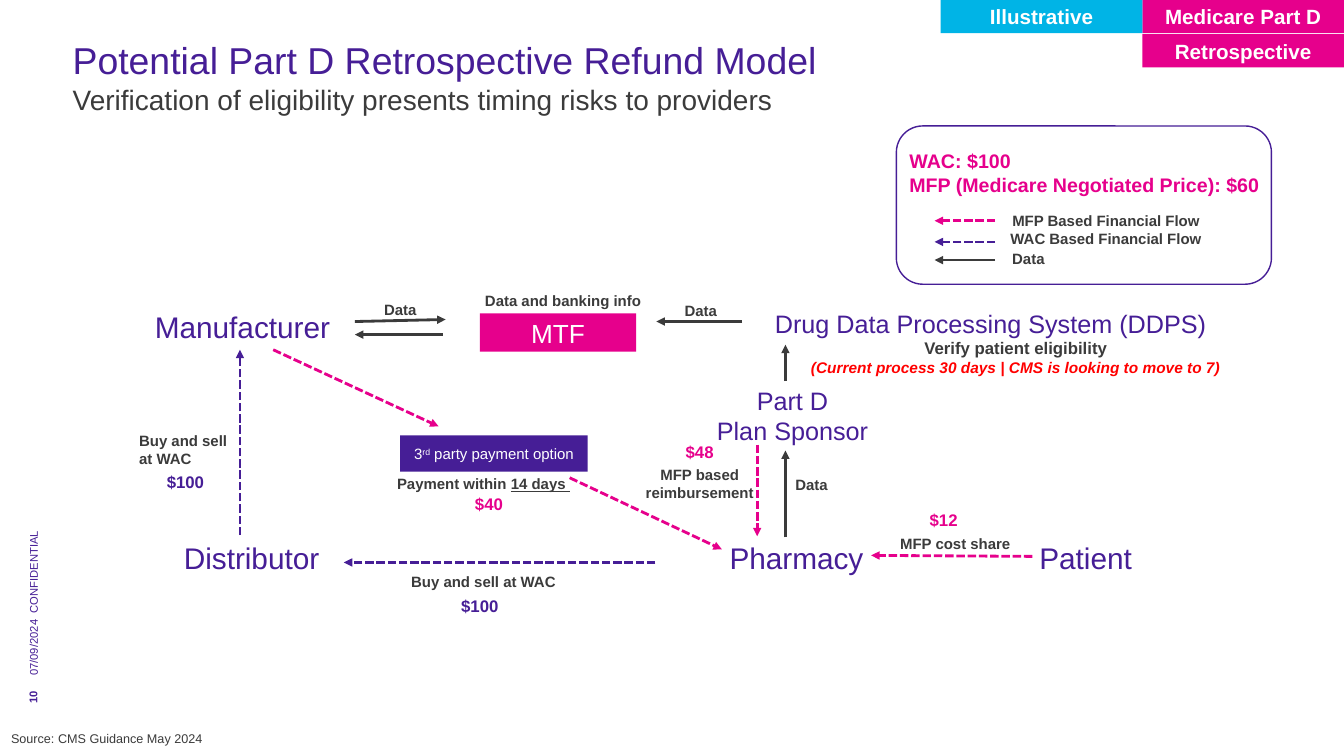
from dataclasses import dataclass
from typing import NamedTuple

from lxml.etree import SubElement
from pptx import Presentation
from pptx.dml.color import RGBColor
from pptx.enum.dml import MSO_LINE
from pptx.enum.shapes import MSO_CONNECTOR, MSO_SHAPE
from pptx.enum.text import MSO_ANCHOR as Anchor, PP_ALIGN as Align
from pptx.oxml.ns import qn
from pptx.util import Inches, Pt

COLORS = {
    "purple": "461E96", "pink": "E6008C", "cyan": "00B4E6",
    "gray": "3B3B3B", "red": "FF0000", "white": "FFFFFF",
}


class Style(NamedTuple):
    size: float
    color: str
    bold: bool = False
    italic: bool = False
    underline: bool = False
    baseline: int = 0


class Span(NamedTuple):
    text: str
    style: Style


@dataclass
class Label:
    box: tuple[float, float, float, float]
    lines: list[list[Span]]
    align: Align = Align.CENTER
    inset: bool = True
    wrap: bool = True
    rotation: int = 0


class Tag(NamedTuple):
    box: tuple[float, float, float, float]
    fill: str
    spans: list[Span]


class Flow(NamedTuple):
    start: tuple[float, float]
    end: tuple[float, float]
    color: str
    dashed: bool = True


ACTOR = Style(21.3, "purple")
SYSTEM = Style(18, "purple")
NOTE = Style(10.7, "gray", bold=True)
WAC_AMOUNT = Style(12, "purple", bold=True)
MFP_AMOUNT = Style(12, "pink", bold=True)
PRICE = Style(14, "pink", bold=True)
TAG = Style(14.7, "white", bold=True)
PAYMENT = Style(10.7, "white")
FOOTER = Style(8, "purple")


def rgb(name: str) -> RGBColor:
    return RGBColor.from_string(COLORS[name])


def one(text: str, style: Style) -> list[list[Span]]:
    """Text of a single line in a single style."""
    return [[Span(text, style)]]


def write(frame, lines: list[list[Span]], align: Align) -> None:
    for index, spans in enumerate(lines):
        paragraph = frame.paragraphs[0] if index == 0 else frame.add_paragraph()
        paragraph.alignment = align
        for text, style in spans:
            run = paragraph.add_run()
            run.text = text
            font = run.font
            font.name, font.size = "Arial", Pt(style.size)
            font.bold, font.italic = style.bold, style.italic
            font.underline = style.underline
            font.color.rgb = rgb(style.color)
            if style.baseline:
                run._r.get_or_add_rPr().set("baseline", str(style.baseline))


def draw_label(shapes, label: Label) -> None:
    box = shapes.add_textbox(*map(Inches, label.box))
    box.rotation = label.rotation
    frame = box.text_frame
    frame.word_wrap = label.wrap
    if not label.inset:
        frame.margin_left = frame.margin_right = 0
        frame.margin_top = frame.margin_bottom = 0
    write(frame, label.lines, label.align)


def draw_tag(shapes, tag: Tag) -> None:
    block = shapes.add_shape(MSO_SHAPE.RECTANGLE, *map(Inches, tag.box))
    block.shadow.inherit = False
    block.fill.solid()
    block.fill.fore_color.rgb = rgb(tag.fill)
    block.line.fill.background()
    block.text_frame.word_wrap = True
    block.text_frame.vertical_anchor = Anchor.MIDDLE
    write(block.text_frame, [tag.spans], Align.CENTER)


def draw_flow(shapes, flow: Flow) -> None:
    arrow = shapes.add_connector(
        MSO_CONNECTOR.STRAIGHT, *map(Inches, flow.start + flow.end))
    arrow.line.width = Pt(2)
    arrow.line.color.rgb = rgb(flow.color)
    if flow.dashed:
        arrow.line.dash_style = MSO_LINE.SQUARE_DOT
    SubElement(arrow.line._get_or_add_ln(), qn("a:tailEnd"), type="triangle")
    SubElement(arrow._element.spPr, qn("a:effectLst"))


def draw_legend_frame(shapes) -> None:
    legend = shapes.add_shape(
        MSO_SHAPE.ROUNDED_RECTANGLE, *map(Inches, (8.89, 1.25, 3.72, 1.57)))
    legend.shadow.inherit = False
    legend.fill.background()
    legend.line.color.rgb = rgb("purple")
    legend.line.width = Pt(1)


TAGS = [
    Tag((11.33, 0, 2, 0.33), "pink", [Span("Medicare Part D", TAG)]),
    Tag((9.33, 0, 2, 0.33), "cyan", [Span("Illustrative", TAG)]),
    Tag((11.33, 0.34, 2, 0.33), "pink", [Span("Retrospective", TAG)]),
    Tag((4.76, 3.11, 1.55, 0.38), "pink", [Span("MTF", Style(18.7, "white"))]),
    Tag((3.97, 4.32, 1.86, 0.36), "purple", [
        Span("3", PAYMENT), Span("rd", PAYMENT._replace(baseline=30000)),
        Span(" party payment option", PAYMENT)]),
]

FLOWS = [
    Flow((2.38, 5.31), (2.38, 3.47), "purple"),
    Flow((6.5, 5.58), (3.41, 5.58), "purple"),
    Flow((10.24, 5.52), (8.64, 5.51), "pink"),
    Flow((5.65, 4.74), (7.16, 5.45), "pink"),
    Flow((2.71, 3.47), (4.35, 4.23), "pink"),
    Flow((7.51, 4.41), (7.51, 5.32), "pink"),
    Flow((7.36, 3.19), (6.51, 3.19), "gray", dashed=False),
    Flow((4.39, 3.32), (3.52, 3.32), "gray", dashed=False),
    Flow((3.52, 3.19), (4.42, 3.17), "gray", dashed=False),
    Flow((7.79, 5.33), (7.79, 4.47), "gray", dashed=False),
    Flow((7.79, 3.78), (7.79, 3.42), "gray", dashed=False),
    Flow((9.87, 2.19), (9.27, 2.19), "pink"),
    Flow((9.87, 2.4), (9.27, 2.4), "purple"),
    Flow((9.87, 2.58), (9.27, 2.58), "gray", dashed=False),
]

LABELS = [
    Label((0.72, 0.37, 11.61, 0.55), [
        [Span("Potential Part D Retrospective Refund Model", Style(26.7, "purple"))],
        [Span("Verification of eligibility presents timing risks to providers",
              Style(20, "gray"))]], Align.LEFT, inset=False),
    Label((8.92, 1.43, 4.12, 0.57), [
        [Span("WAC: $100", PRICE)],
        [Span("MFP (Medicare Negotiated Price): $60", PRICE)]], Align.LEFT),
    Label((9.87, 2.05, 2.2, 0.46), one("MFP Based Financial Flow", NOTE)),
    Label((9.87, 2.23, 2.2, 0.46), one("WAC Based Financial Flow", NOTE)),
    Label((9.75, 2.43, 0.9, 0.28), one("Data", NOTE)),
    Label((1.31, 3.01, 2.19, 0.46), one("Manufacturer", ACTOR)),
    Label((1.62, 5.31, 1.75, 0.46), one("Distributor", ACTOR)),
    Label((6.9, 5.31, 2, 0.46), one("Pharmacy", ACTOR)),
    Label((10.21, 5.31, 1.87, 0.46), one("Patient", ACTOR), Align.LEFT),
    Label((7.29, 3.01, 5.07, 0.41), one("Drug Data Processing System (DDPS)", SYSTEM)),
    Label((6.65, 3.77, 2.42, 0.71),
          [[Span("Part D", SYSTEM)], [Span("Plan Sponsor", SYSTEM)]]),
    Label((7.64, 3.3, 4.87, 0.62), [
        [Span("Verify patient eligibility", Style(12, "gray", bold=True))],
        [Span("(Current process 30 days | CMS is looking to move to 7)",
              Style(11, "red", bold=True, italic=True))]]),
    Label((3.58, 2.84, 4.01, 0.28), one("Data and banking info", NOTE)),
    Label((3.67, 2.93, 0.6, 0.28), one("Data", NOTE)),
    Label((6.65, 2.94, 0.6, 0.28), one("Data", NOTE)),
    Label((7.75, 4.67, 0.6, 0.28), one("Data", NOTE)),
    Label((8.2, 5.25, 2.55, 0.28), one("MFP cost share", NOTE)),
    Label((6.28, 4.57, 1.32, 0.46), one("MFP based reimbursement", NOTE)),
    Label((3.92, 4.71, 1.75, 0.18), [[
        Span("Payment within ", NOTE),
        Span("14 days ", NOTE._replace(underline=True))]], inset=False),
    Label((1.38, 4.28, 0.92, 0.36), one("Buy and sell at WAC", NOTE),
          Align.LEFT, inset=False),
    Label((3.98, 5.63, 1.72, 0.28), one("Buy and sell at WAC", NOTE), Align.LEFT),
    Label((1.51, 4.63, 0.66, 0.3), one("$100", WAC_AMOUNT)),
    Label((4.43, 5.86, 0.66, 0.3), one("$100", WAC_AMOUNT)),
    Label((4.52, 4.85, 0.66, 0.3), one("$40", MFP_AMOUNT)),
    Label((9.03, 5.01, 0.66, 0.3), one("$12", MFP_AMOUNT)),
    Label((6.61, 4.33, 0.66, 0.3), one("$48", MFP_AMOUNT)),
    Label((0.03, 6.31, 0.63, 0.16), one("07/09/2024", FOOTER),
          Align.LEFT, inset=False, rotation=270),
    Label((-0.93, 4.73, 2.55, 0.16), one("CONFIDENTIAL", FOOTER),
          Align.LEFT, inset=False, rotation=270),
    Label((0.21, 6.77, 0.26, 0.16), one("10", FOOTER._replace(bold=True)),
          Align.LEFT, inset=False, rotation=270),
    Label((0.11, 7.25, 1.91, 0.3), one("Source: CMS Guidance May 2024", Style(9, "gray")),
          Align.LEFT, inset=False, wrap=False),
]


def main() -> None:
    deck = Presentation()
    deck.slide_width, deck.slide_height = Inches(13.33), Inches(7.5)
    shapes = deck.slides.add_slide(deck.slide_layouts[6]).shapes
    draw_legend_frame(shapes)
    for tag in TAGS:
        draw_tag(shapes, tag)
    for flow in FLOWS:
        draw_flow(shapes, flow)
    for label in LABELS:
        draw_label(shapes, label)
    deck.save("out.pptx")


if __name__ == "__main__":
    main()
